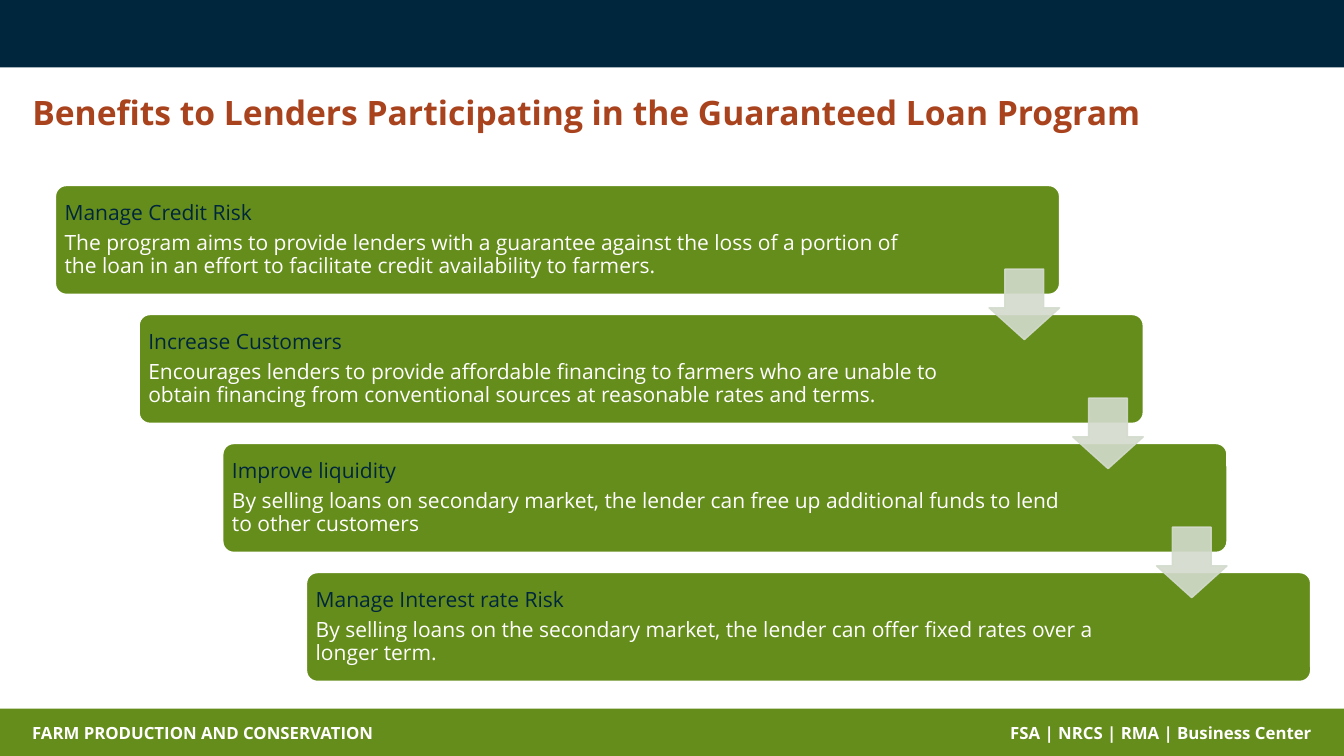
import pptx
import pptx.util
from pptx.dml.color import RGBColor
from pptx.enum.shapes import MSO_SHAPE
from pptx.enum.text import MSO_ANCHOR, MSO_AUTO_SIZE, PP_ALIGN
from pptx.oxml.ns import qn
from lxml import etree

Inches, Pt = pptx.util.Inches, pptx.util.Pt

TITLE = "Benefits to Lenders Participating in the Guaranteed Loan Program"
BENEFITS = [
    ("Manage Credit Risk",
     "The program aims to provide lenders with a guarantee against the loss of a portion of "
     "the loan in an effort to facilitate credit availability to farmers.", 1.26),
    ("Increase Customers",
     "Encourages lenders to provide affordable financing to farmers who are unable to "
     "obtain financing from conventional sources at reasonable rates and terms.", 1.6),
    ("Improve liquidity",
     "By selling loans on secondary market, the lender can free up additional funds to lend "
     "to other customers", 1.59),
    ("Manage Interest rate Risk",
     "By selling loans on the secondary market, the lender can offer fixed rates over a "
     "longer term.", 1.6),
]
FOOTERS = [
    ("FARM PRODUCTION AND CONSERVATION", 0.22, PP_ALIGN.LEFT),
    ("FSA | NRCS | RMA | Business Center", 8.2, PP_ALIGN.RIGHT),
]

FONT = "Open Sans"
NAVY = RGBColor(0x00, 0x26, 0x3E)
GREEN = RGBColor(0x65, 0x8D, 0x1B)
RUST = RGBColor(0xA9, 0x43, 0x1E)
SAGE = RGBColor(0xD3, 0xDB, 0xCD)
WHITE = RGBColor(0xFF, 0xFF, 0xFF)

WIDTH, HEIGHT = 13.33, 7.5
CARD_LEFT, CARD_TOP, CARD_WIDTH, CARD_HEIGHT = 0.55, 1.84, 9.96, 1.08
STEP_X, STEP_Y = 0.83, 1.28
ARROW_SIZE, ARROW_DROP = 0.7, 0.83
INSET = 0.06


def add_block(page, kind, left, top, width, height, color, outline=None):
    """Add a filled shape without shadow, outlined only if a colour is given."""
    block = page.shapes.add_shape(
        kind, Inches(left), Inches(top), Inches(width), Inches(height))
    block.shadow.inherit = False
    block.fill.solid()
    block.fill.fore_color.rgb = color
    if outline is None:
        block.line.fill.background()
    else:
        block.line.color.rgb = outline
        block.line.width = Pt(1)
    return block


def style(para, size, color, bold=False, align=PP_ALIGN.LEFT):
    """Format a paragraph and its runs."""
    para.alignment = align
    for span in para.runs:
        span.font.name = FONT
        span.font.size = Pt(size)
        span.font.bold = bold
        span.font.color.rgb = color


def add_bars(page):
    """Draw the header band and the footer band with its two labels."""
    add_block(page, MSO_SHAPE.RECTANGLE, 0, 0, WIDTH, 0.67, NAVY)
    add_block(page, MSO_SHAPE.RECTANGLE, 0, 7.03, WIDTH, 0.47, GREEN)
    for label, left, align in FOOTERS:
        box = page.shapes.add_textbox(Inches(left), Inches(7.12), Inches(4.91), Inches(0.3))
        box.text_frame.word_wrap = True
        box.text_frame.text = label
        style(box.text_frame.paragraphs[0], 12, WHITE, True, align)


def add_title(page):
    """Fill and place the title placeholder."""
    title = page.shapes.title
    title.left, title.top = Inches(0.22), Inches(0.91)
    title.width, title.height = Inches(12.78), Inches(0.58)
    frame = title.text_frame
    frame.text = TITLE
    frame.auto_size = MSO_AUTO_SIZE.NONE
    frame.vertical_anchor = MSO_ANCHOR.TOP
    para = frame.paragraphs[0]
    para.line_spacing = 0.9
    style(para, 24, RUST, True)


def add_card(page, left, top, heading, detail, right_inset):
    """Draw one benefit card with its heading and detail."""
    card = add_block(page, MSO_SHAPE.ROUNDED_RECTANGLE, left, top,
                     CARD_WIDTH, CARD_HEIGHT, GREEN, WHITE)
    card.adjustments[0] = 0.1
    frame = card.text_frame
    frame.word_wrap = True
    frame.vertical_anchor = MSO_ANCHOR.MIDDLE
    frame.margin_left = frame.margin_top = frame.margin_bottom = Inches(INSET)
    frame.margin_right = Inches(right_inset)
    frame.text = f"{heading}\n{detail}"
    for para, color in zip(frame.paragraphs, (NAVY, WHITE)):
        para.line_spacing = 0.9
        para.space_after = Pt(5.25)
        style(para, 15, color)


def add_arrow(page, left, top):
    """Draw one slightly transparent down arrow."""
    arrow = add_block(page, MSO_SHAPE.DOWN_ARROW, left, top,
                      ARROW_SIZE, ARROW_SIZE, SAGE, SAGE)
    arrow.adjustments[0], arrow.adjustments[1] = 0.55, 0.45
    for color in arrow.element.spPr.iter(qn("a:srgbClr")):
        etree.SubElement(color, qn("a:alpha"), val="90000")


def main():
    """Build the slide and save it."""
    deck = pptx.Presentation()
    deck.slide_width, deck.slide_height = Inches(WIDTH), Inches(HEIGHT)
    page = deck.slides.add_slide(deck.slide_layouts[5])
    add_bars(page)
    add_title(page)
    corners = [(CARD_LEFT + i * STEP_X, CARD_TOP + i * STEP_Y) for i in range(len(BENEFITS))]
    for (left, top), benefit in zip(corners, BENEFITS):
        add_card(page, left, top, *benefit)
    for left, top in corners[:-1]:
        add_arrow(page, left + CARD_WIDTH - ARROW_SIZE, top + ARROW_DROP)
    deck.save("out.pptx")


if __name__ == "__main__":
    main()
